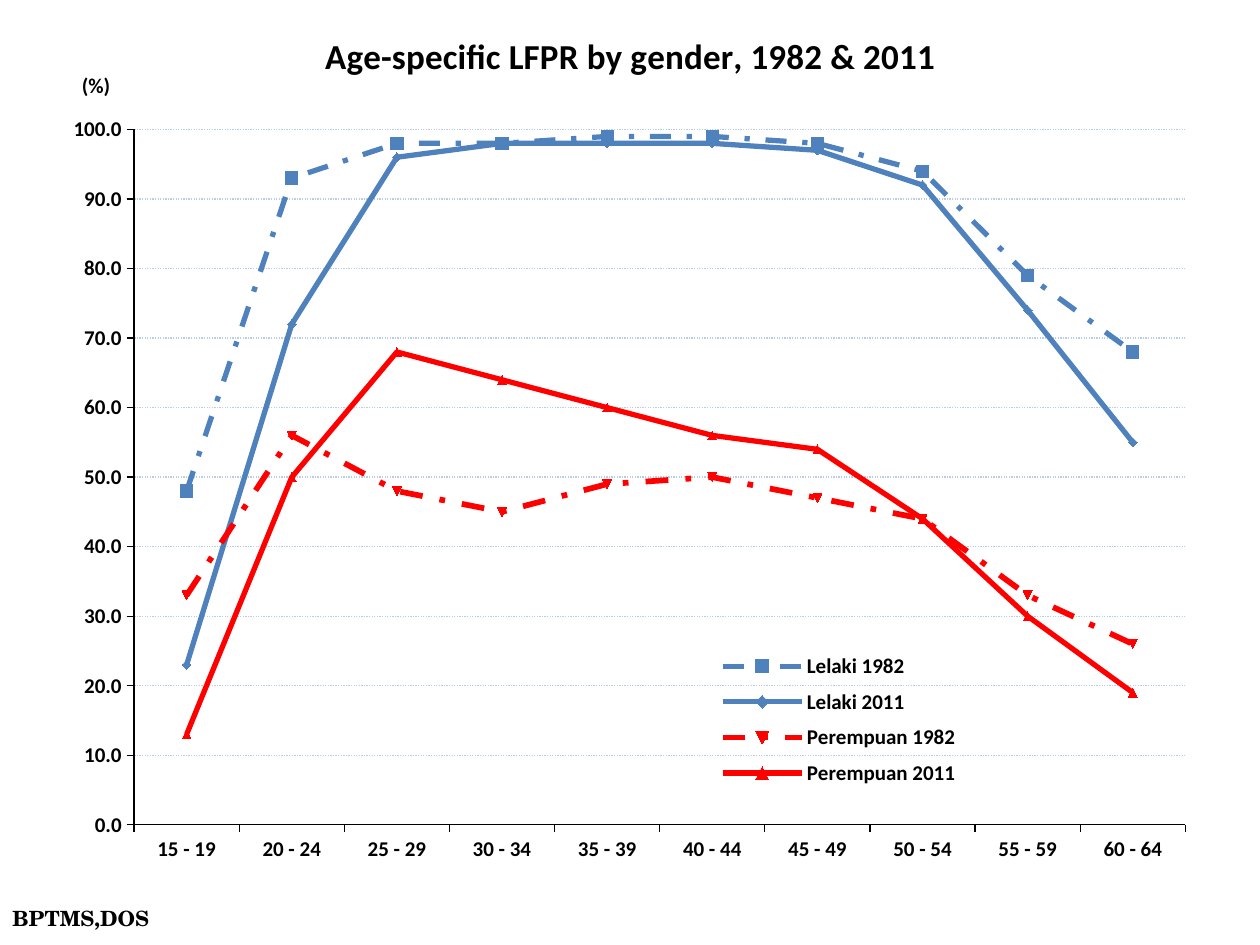
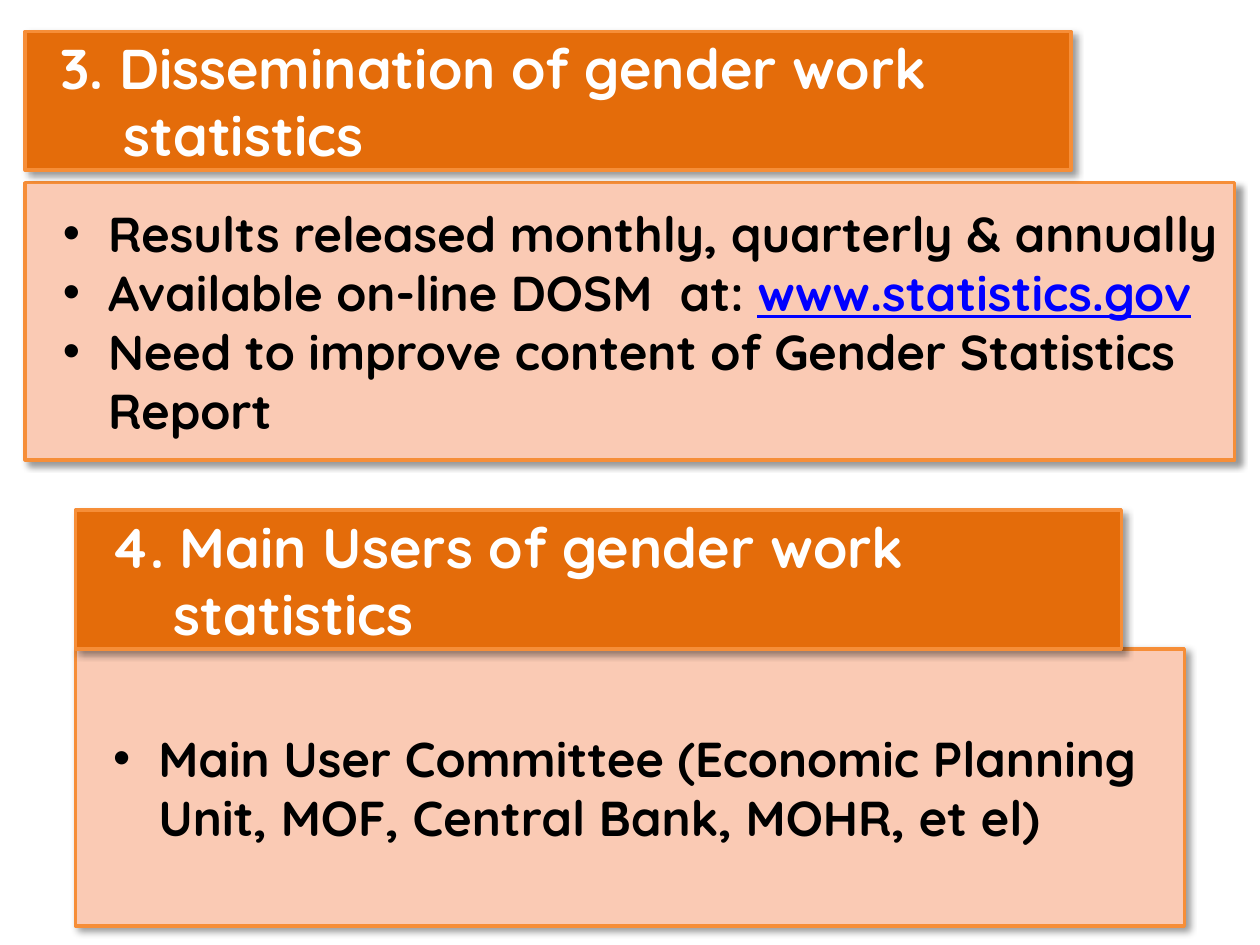
from lxml import etree
from pptx import Presentation
from pptx.chart.data import CategoryChartData
from pptx.dml.color import RGBColor
from pptx.enum.chart import XL_CHART_TYPE, XL_LEGEND_POSITION, XL_MARKER_STYLE, XL_TICK_MARK
from pptx.enum.dml import MSO_LINE
from pptx.enum.shapes import MSO_SHAPE
from pptx.enum.text import MSO_ANCHOR, PP_ALIGN
from pptx.oxml import parse_xml
from pptx.oxml.ns import nsdecls, qn
from pptx.util import Inches, Pt

COLOURS = {
    "text": "000000", "white": "FFFFFF", "link": "0000FF",
    "heading": "E46C0A", "panel": "FACAB4", "border": "F68E38",
    "men": "4F81BD", "women": "FF0000", "grid": "B9CDE5",
}
CHART_FONT, SECTION_FONT, SOURCE_FONT = "Calibri", "Quicksand", "TeX Gyre Schola"

AGES = [f"{start} - {start + 4}" for start in range(15, 65, 5)]
# Name, colour, line width, dash, marker size, values
SERIES = [
    ("Lelaki 1982", "men", 3, MSO_LINE.DASH_DOT, 7,
     (48, 93, 98, 98, 99, 99, 98, 94, 79, 68)),
    ("Lelaki 2011", "men", 3, MSO_LINE.SOLID, 5,
     (23, 72, 96, 98, 98, 98, 97, 92, 74, 55)),
    ("Perempuan 1982", "women", 3.25, MSO_LINE.DASH_DOT, 5,
     (33, 56, 48, 45, 49, 50, 47, 44, 33, 26)),
    ("Perempuan 2011", "women", 3, MSO_LINE.SOLID, 5,
     (13, 50, 68, 64, 60, 56, 54, 44, 30, 19)),
]


def colour(name):
    return RGBColor.from_string(COLOURS[name])


def style_font(font, size, name, ink="text", **options):
    settings = {"size": Pt(size), "name": name, "bold": True, **options}
    for key, value in settings.items():
        setattr(font, key, value)
    font.color.rgb = colour(ink)


def style_line(line, ink, width, dash=None):
    line.color.rgb = colour(ink)
    line.width = Pt(width)
    if dash:
        line.dash_style = dash


def place_chart_part(part, index, **values):
    """Give a chart part a manual layout, in fractions of the chart."""
    layout = part.find(qn("c:layout"))
    if layout is None:
        layout = etree.Element(qn("c:layout"))
        part.insert(index, layout)
    manual = etree.SubElement(layout, qn("c:manualLayout"))
    for key, value in values.items():
        etree.SubElement(manual, qn(f"c:{key}")).set("val", str(value))


def add_span(para, text, size, name, ink="text", **options):
    span = para.add_run()
    span.text = text
    style_font(span.font, size, name, ink, **options)


# Line chart
def style_axes(chart):
    for axis in (chart.category_axis, chart.value_axis):
        axis.major_tick_mark = XL_TICK_MARK.OUTSIDE
        axis.minor_tick_mark = XL_TICK_MARK.NONE
        style_font(axis.tick_labels.font, 12, CHART_FONT)
        style_line(axis.format.line, "text", 0.75)

    scale = chart.value_axis
    settings = {"minimum_scale": 0, "maximum_scale": 100, "major_unit": 10,
                "has_major_gridlines": True}
    for key, value in settings.items():
        setattr(scale, key, value)
    scale.tick_labels.number_format = "#,##0.0"
    scale.tick_labels.number_format_is_linked = False
    style_line(scale.major_gridlines.format.line, "grid", 0.75, MSO_LINE.ROUND_DOT)

    unit = scale.axis_title.text_frame
    add_span(unit.paragraphs[0], "(%)", 12, CHART_FONT)
    body = unit._txBody.find(qn("a:bodyPr"))
    body.set("rot", "0")
    body.set("vert", "horz")
    place_chart_part(scale.axis_title._element, 1,
                     xMode="edge", yMode="edge", x=0.036, y=0.075)


def style_series(chart):
    for series, (_, ink, width, dash, marker_size, _) in zip(chart.plots[0].series, SERIES):
        series.smooth = False
        style_line(series.format.line, ink, width, dash)
        marker = series.marker
        marker.style = XL_MARKER_STYLE.AUTOMATIC
        marker.size = marker_size
        marker.format.fill.solid()
        marker.format.fill.fore_color.rgb = colour(ink)
        marker.format.line.color.rgb = colour(ink)


def add_rate_chart(page, box):
    data = CategoryChartData(number_format="#,##0.0")
    data.categories = AGES
    for name, *_, values in SERIES:
        data.add_series(name, values)
    chart = page.shapes.add_chart(XL_CHART_TYPE.LINE_MARKERS,
                                  *map(Inches, box), data).chart
    style_font(chart.font, 10, CHART_FONT, bold=False)
    chart.plots[0].vary_by_categories = False

    chart.has_title = True
    add_span(chart.chart_title.text_frame.paragraphs[0],
             "Age-specific LFPR by gender, 1982 & 2011", 20, CHART_FONT)
    chart.chart_title._element.find(qn("c:overlay")).set("val", "1")

    chart.has_legend = True
    legend = chart.legend
    legend.position = XL_LEGEND_POSITION.RIGHT
    legend.include_in_layout = False
    style_font(legend.font, 12, CHART_FONT)
    place_chart_part(legend._element, 1, xMode="edge", yMode="edge",
                     x=0.57, y=0.715, w=0.21, h=0.17)

    plot_area = chart._chartSpace.find(".//" + qn("c:plotArea"))
    place_chart_part(plot_area, 0, layoutTarget="inner", xMode="edge", yMode="edge",
                     x=0.083, y=0.144, w=0.883, h=0.773)
    style_axes(chart)
    style_series(chart)


def add_source(page, box):
    frame = page.shapes.add_textbox(*map(Inches, box)).text_frame
    frame.word_wrap = True
    add_span(frame.paragraphs[0], "BPTMS,DOS", 12, SOURCE_FONT)


# Shadowed boxes
def add_shadow(shape):
    shape._element.spPr.append(parse_xml(
        f'<a:effectLst {nsdecls("a")}>'
        f'<a:outerShdw blurRad="{Pt(4)}" dist="{Pt(3)}" dir="{45 * 60000}" '
        'algn="tl" rotWithShape="0">'
        f'<a:srgbClr val="{COLOURS["text"]}"><a:alpha val="40000"/></a:srgbClr>'
        '</a:outerShdw></a:effectLst>'))


def add_box(page, box, fill):
    shape = page.shapes.add_shape(MSO_SHAPE.RECTANGLE, *map(Inches, box))
    shape.fill.solid()
    shape.fill.fore_color.rgb = colour(fill)
    style_line(shape.line, "border", 2)
    add_shadow(shape)
    frame = shape.text_frame
    frame.word_wrap = True
    frame.vertical_anchor = MSO_ANCHOR.MIDDLE
    return frame


def indent_para(para, left, first, bullet=None):
    para.alignment = PP_ALIGN.LEFT
    properties = para._p.get_or_add_pPr()
    properties.set("marL", str(Inches(left)))
    properties.set("indent", str(Inches(first)))
    if bullet:
        etree.SubElement(properties, qn("a:buFont")).set("typeface", "Arial")
        etree.SubElement(properties, qn("a:buChar")).set("char", bullet)


def add_section(page, box, heading, points, panel_width, gap=0):
    """Place a heading band with a panel of bullet points below it."""
    left, top, width, height = box
    band_height = 1.1
    panel_top = top + band_height + gap
    panel = add_box(page, (left, panel_top, panel_width, top + height - panel_top), "panel")
    for number, spans in enumerate(points):
        para = panel.add_paragraph() if number else panel.paragraphs[0]
        indent_para(para, 0.56, -0.36, "•")
        for text, ink in spans:
            add_span(para, text, 28, SECTION_FONT, ink, underline=ink == "link")

    band = add_box(page, (left, top, width, band_height), "heading")
    indent_para(band.paragraphs[0], 0.68, -0.5)
    add_span(band.paragraphs[0], heading, 32, SECTION_FONT, "white")


# Slides
def build_chart_page(page):
    add_rate_chart(page, (0.28, 0, 9.45, 7.14))
    add_source(page, (0, 7.14, 1.45, 0.5))


def build_sections_page(page):
    add_section(page, (0.2, 0.25, 8.3, 3.4),
                "3. Dissemination of gender work statistics",
                [[("Results released monthly, quarterly & annually", "text")],
                 [("Available on-line DOSM  at: ", "text"), ("www.statistics.gov", "link")],
                 [("Need to improve content of Gender Statistics Report", "text")]],
                panel_width=9.6, gap=0.1)
    add_section(page, (0.6, 4.05, 8.3, 3.3),
                "4. Main Users of gender work statistics",
                [[("Main User Committee (Economic Planning Unit, MOF, "
                   "Central Bank, MOHR, et el)", "text")]],
                panel_width=8.8)


def main():
    deck = Presentation()
    deck.slide_width, deck.slide_height = Inches(10), Inches(7.5)
    blank = deck.slide_layouts.get_by_name("Blank")
    for build in (build_chart_page, build_sections_page):
        build(deck.slides.add_slide(blank))
    deck.save("out.pptx")


if __name__ == "__main__":
    main()
